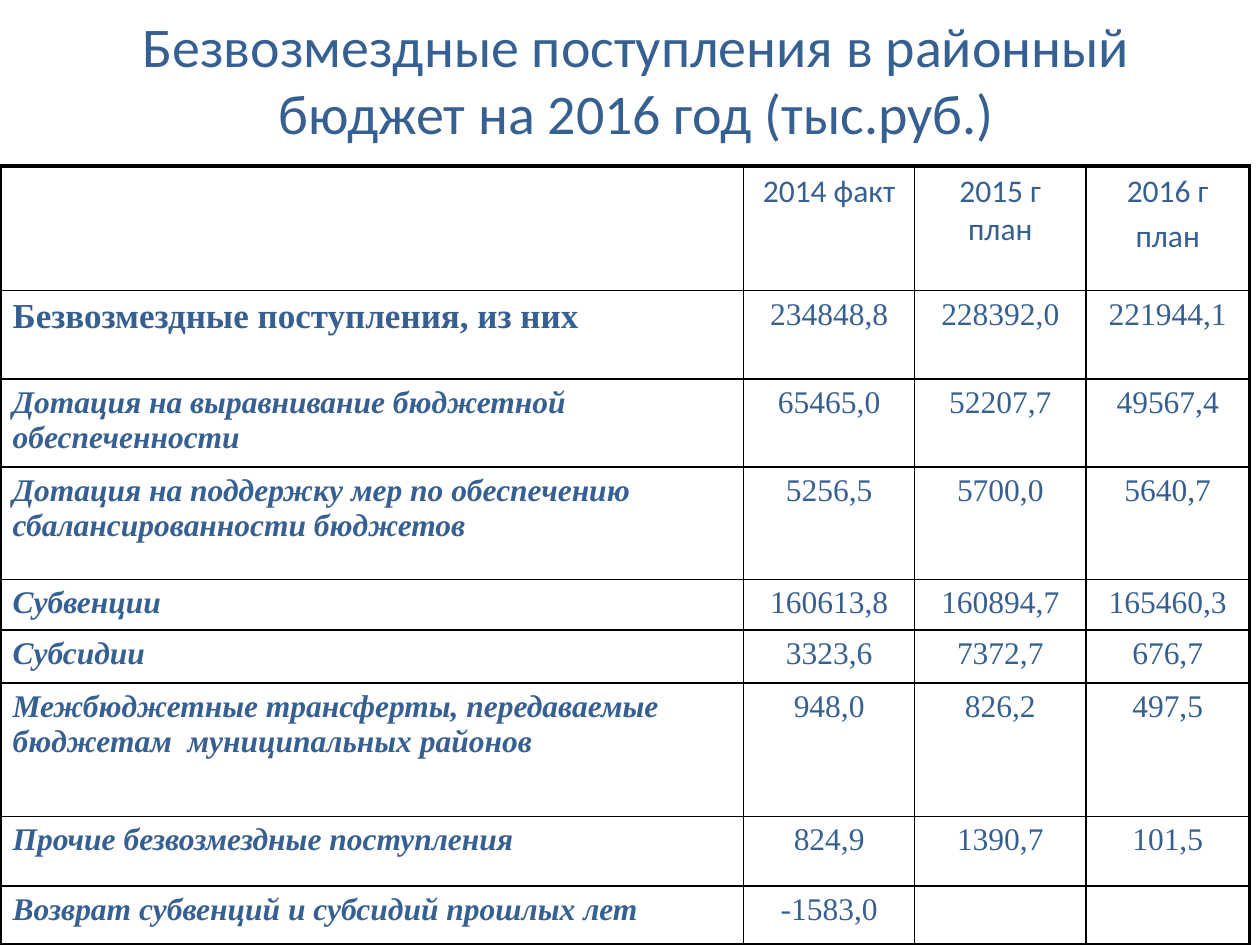
"""Build a slide with a table of grants to the district budget."""
from lxml.etree import SubElement as Sub
from pptx import Presentation as Deck
from pptx.dml.color import RGBColor as Rgb
from pptx.enum.text import MSO_ANCHOR as Anchor, MSO_AUTO_SIZE as Fit, PP_ALIGN as Align
from pptx.oxml.ns import qn
from pptx.util import Cm, Pt

BLUE = Rgb(0x37, 0x60, 0x92)
BLACK = Rgb(0, 0, 0)
SERIF = "Times New Roman"
THIN, THICK = Pt(1), Pt(2.25)

HEAD = {"name": "Calibri", "size": Pt(18)}
NUM = {"name": SERIF, "size": Pt(18)}
ITEM = {**NUM, "bold": True, "italic": True}
TOTAL = {"name": SERIF, "size": Pt(20), "bold": True}

COLS = [14.99, 3.45, 3.45, 3.3]
ROWS = [
    (2.51, "", "2014 факт", "2015 г план", "2016 г\nплан"),
    (1.78, "Безвозмездные поступления, из них", "234848,8", "228392,0", "221944,1"),
    (1.78, "Дотация на выравнивание бюджетной обеспеченности", "65465,0", "52207,7", "49567,4"),
    (2.26, "Дотация на поддержку мер по обеспечению сбалансированности бюджетов",
     "5256,5", "5700,0", "5640,7"),
    (1.02, "Субвенции", "160613,8", "160894,7", "165460,3"),
    (1.07, "Субсидии", "3323,6", "7372,7", "676,7"),
    (2.69, "Межбюджетные трансферты, передаваемые бюджетам  муниципальных районов",
     "948,0", "826,2", "497,5"),
    (1.4, "Прочие безвозмездные поступления", "824,9", "1390,7", "101,5"),
    (1.19, "Возврат субвенций и субсидий прошлых лет", "-1583,0", "", ""),
]


def apply(obj, vals):
    for key, val in vals.items():
        setattr(obj, key, val)


class Page:
    def __init__(self, slide, color):
        self.slide = slide
        self.color = color

    def label(self, frame, text, font, para):
        frame.text = text
        for par in frame.paragraphs:
            apply(par, para)
            for run in par.runs:
                apply(run.font, font)
                run.font.color.rgb = self.color

    def title(self, text, box, font):
        shape = self.slide.shapes.title
        apply(shape, box)
        apply(shape.text_frame, {"vertical_anchor": Anchor.MIDDLE, "auto_size": Fit.NONE})
        self.label(shape.text_frame, text, font, {"alignment": Align.CENTER})

    def border(self, cell, sides):
        props = cell._tc.get_or_add_tcPr()
        for side, width in sides.items():
            line = Sub(props, qn(f"a:ln{side}"), w=str(width))
            fill = Sub(line, qn("a:solidFill"))
            Sub(fill, qn("a:srgbClr"), val=str(BLACK))

    def table(self, rows, cols, left, top):
        high = sum(row[0] for row in rows)
        size = Cm(left), Cm(top), Cm(sum(cols)), Cm(high)
        grid = self.slide.shapes.add_table(len(rows), len(cols), *size).table
        apply(grid, {"first_row": False, "horz_banding": False})
        for col, width in zip(grid.columns, cols):
            col.width = Cm(width)
        for r, (height, *texts) in enumerate(rows):
            grid.rows[r].height = Cm(height)
            for c, text in enumerate(texts):
                cell = grid.cell(r, c)
                edges = {"L": c == 0, "R": c == len(cols) - 1,
                         "T": r == 0, "B": r == len(rows) - 1}
                self.border(cell, {s: THICK if e else THIN for s, e in edges.items()})
                cell.fill.background()
                first = TOTAL if r == 1 else ITEM
                font = HEAD if r == 0 else NUM if c else first
                align = Align.CENTER if c else Align.LEFT
                self.label(cell.text_frame, text, font,
                           {"alignment": align, "space_before": Pt(3.6)})


def main():
    deck = Deck()
    apply(deck, {"slide_width": Cm(25.4), "slide_height": Cm(19.05)})
    page = Page(deck.slides.add_slide(deck.slide_layouts[5]), BLUE)
    box = {"left": Cm(1.4), "top": Cm(0), "width": Cm(22.86), "height": Cm(3.18)}
    page.title("Безвозмездные поступления в районный бюджет на 2016 год (тыс.руб.)",
               box, {"name": "Calibri", "size": Pt(32)})
    page.table(ROWS, COLS, 0, 3.35)
    deck.save("out.pptx")


if __name__ == "__main__":
    main()
